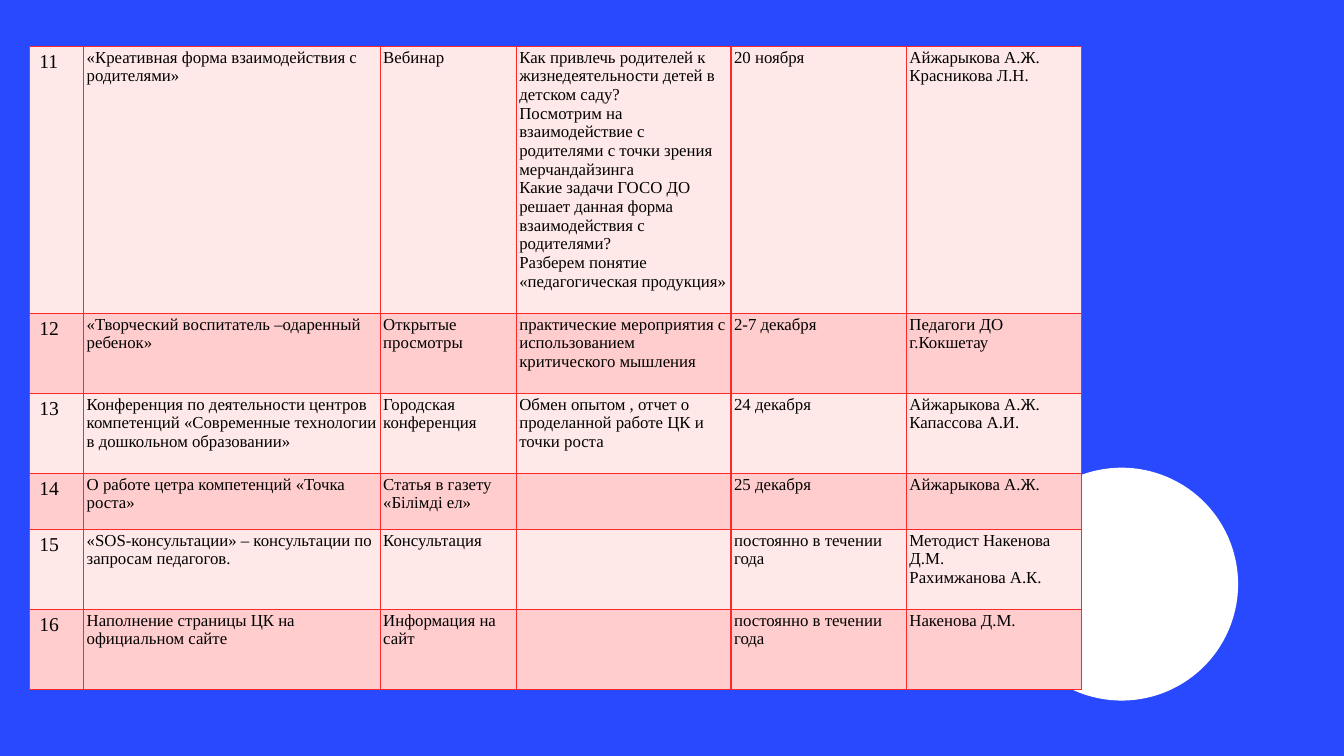
import lxml.etree
import pptx
import pptx.dml.color
import pptx.enum.shapes
import pptx.oxml.ns
import pptx.util

EVENTS = [
    ("11", "«Креативная форма взаимодействия с родителями»", "Вебинар",
     "Как привлечь родителей к жизнедеятельности детей в детском саду?\n"
     "Посмотрим на взаимодействие с родителями с точки зрения мерчандайзинга\n"
     "Какие задачи ГОСО ДО решает данная форма взаимодействия с родителями?\n"
     "Разберем понятие «педагогическая продукция»",
     "20 ноября", "Айжарыкова А.Ж.\nКрасникова Л.Н."),
    ("12", "«Творческий воспитатель –одаренный ребенок»", "Открытые просмотры",
     "практические мероприятия с использованием критического мышления",
     "2-7 декабря", "Педагоги ДО г.Кокшетау"),
    ("13", "Конференция по деятельности центров компетенций «Современные технологии в дошкольном образовании»",
     "Городская конференция", "Обмен опытом , отчет о проделанной работе ЦК и точки роста",
     "24 декабря", "Айжарыкова А.Ж. \nКапассова А.И."),
    ("14", "О работе цетра компетенций «Точка роста»", "Статья в газету «Білімді ел»",
     "", "25 декабря", "Айжарыкова А.Ж."),
    ("15", "«SOS-консультации» – консультации по запросам педагогов.", "Консультация",
     "", "постоянно в течении года", "Методист Накенова Д.М.\nРахимжанова А.К."),
    ("16", "Наполнение страницы ЦК на официальном сайте", "Информация на сайт",
     "", "постоянно в течении года", "Накенова Д.М."),
]
COLUMN_WIDTHS = [4.05, 22.06, 10.13, 15.98, 13.05, 13.05]
ROW_HEIGHTS = [35.32, 10.58, 10.58, 7.41, 10.58, 10.58]


def color(value):
    return pptx.dml.color.RGBColor.from_string(value)


class Deck:
    font = "Times New Roman"
    background = "2849FD"
    accent = "FFFFFF"
    ink = "000000"
    border = "FF2828"
    bands = ("FFE8E8", "FFCDCD")
    number_size = 14
    body_size = 12

    def __init__(self):
        self.presentation = pptx.Presentation()
        self.presentation.slide_width = pptx.util.Inches(13.33)
        self.presentation.slide_height = pptx.util.Inches(7.5)
        self.slide = self.presentation.slides.add_slide(self.presentation.slide_layouts[6])
        backdrop = self.slide.background.fill
        backdrop.solid()
        backdrop.fore_color.rgb = color(self.background)

    def across(self, percent):
        return round(self.presentation.slide_width * percent / 100)

    def down(self, percent):
        return round(self.presentation.slide_height * percent / 100)

    def circle(self, left, top, diameter):
        size = self.across(diameter)
        disc = self.slide.shapes.add_shape(
            pptx.enum.shapes.MSO_SHAPE.OVAL, self.across(left), self.down(top), size, size)
        disc.shadow.inherit = False
        disc.fill.solid()
        disc.fill.fore_color.rgb = color(self.accent)
        disc.line.fill.background()

    def table(self, left, top, widths, heights, records):
        schedule = self.slide.shapes.add_table(
            len(heights), len(widths), self.across(left), self.down(top),
            self.across(sum(widths)), self.down(sum(heights))).table
        schedule.first_row = False
        schedule.horz_banding = False
        for column, width in zip(schedule.columns, widths):
            column.width = self.across(width)
        for row, height in zip(schedule.rows, heights):
            row.height = self.down(height)
        for row_index, record in enumerate(records):
            for column_index, wording in enumerate(record):
                cell = schedule.cell(row_index, column_index)
                cell.fill.solid()
                cell.fill.fore_color.rgb = color(self.bands[row_index % 2])
                self.outline(cell)
                if column_index:
                    cell.margin_left = cell.margin_right = pptx.util.Inches(0.03)
                    cell.margin_top = cell.margin_bottom = pptx.util.Inches(0.02)
                self.cell_text(cell, wording, self.body_size if column_index else self.number_size)

    def cell_text(self, cell, wording, size):
        paragraph = cell.text_frame.paragraphs[0]
        paragraph.text = wording
        paragraph.font.size = pptx.util.Pt(size)
        for run in paragraph.runs:
            run.font.name = self.font
            run.font.size = pptx.util.Pt(size)
            run.font.color.rgb = color(self.ink)
        qn = pptx.oxml.ns.qn
        for line_break in paragraph._p.findall(qn("a:br")):
            lxml.etree.SubElement(line_break, qn("a:rPr"), sz=str(size * 100))

    def outline(self, cell):
        qn = pptx.oxml.ns.qn
        properties = cell._tc.get_or_add_tcPr()
        for position, side in enumerate(("a:lnL", "a:lnR", "a:lnT", "a:lnB")):
            edge = lxml.etree.Element(qn(side), w=str(pptx.util.Pt(1)))
            paint = lxml.etree.SubElement(edge, qn("a:solidFill"))
            lxml.etree.SubElement(paint, qn("a:srgbClr"), val=self.border)
            properties.insert(position, edge)

    def save(self):
        self.presentation.save("out.pptx")


def main():
    deck = Deck()
    deck.circle(74.79, 61.87, 17.33)
    deck.table(2.18, 6.13, COLUMN_WIDTHS, ROW_HEIGHTS, EVENTS)
    deck.save()


if __name__ == "__main__":
    main()
